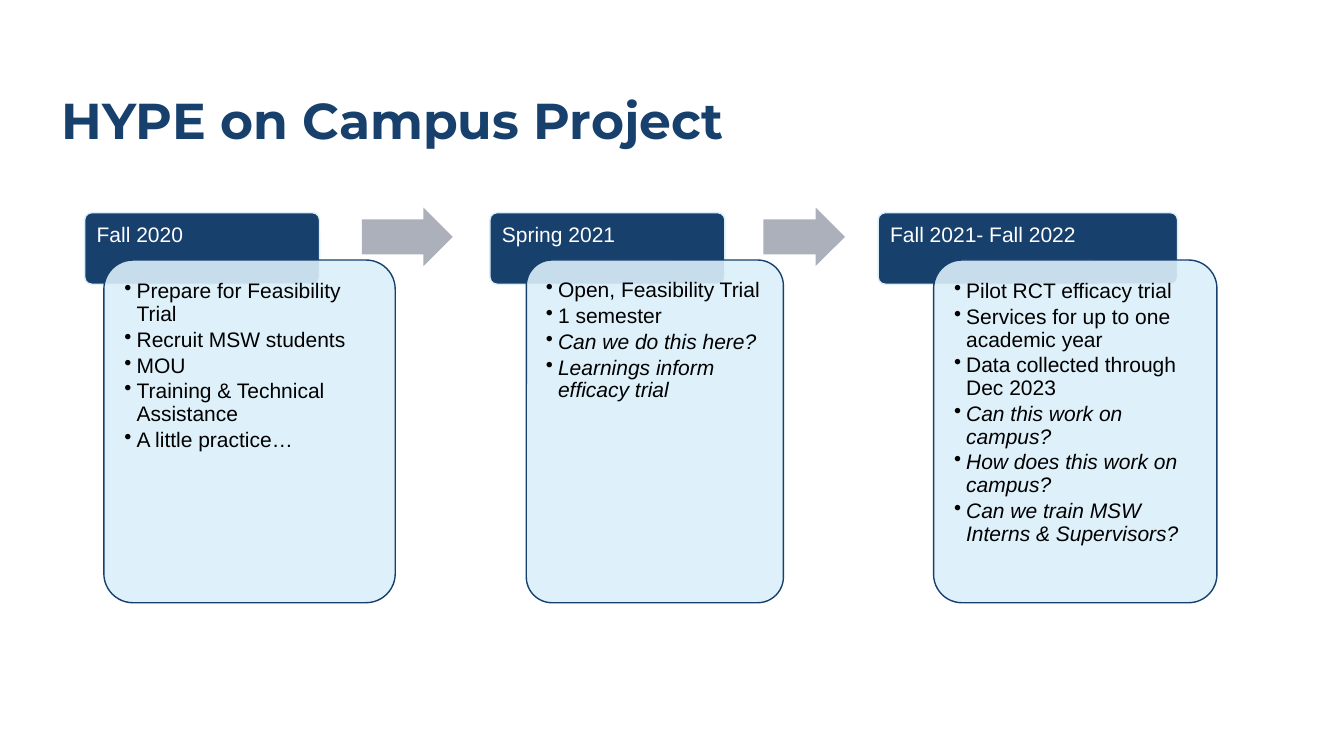
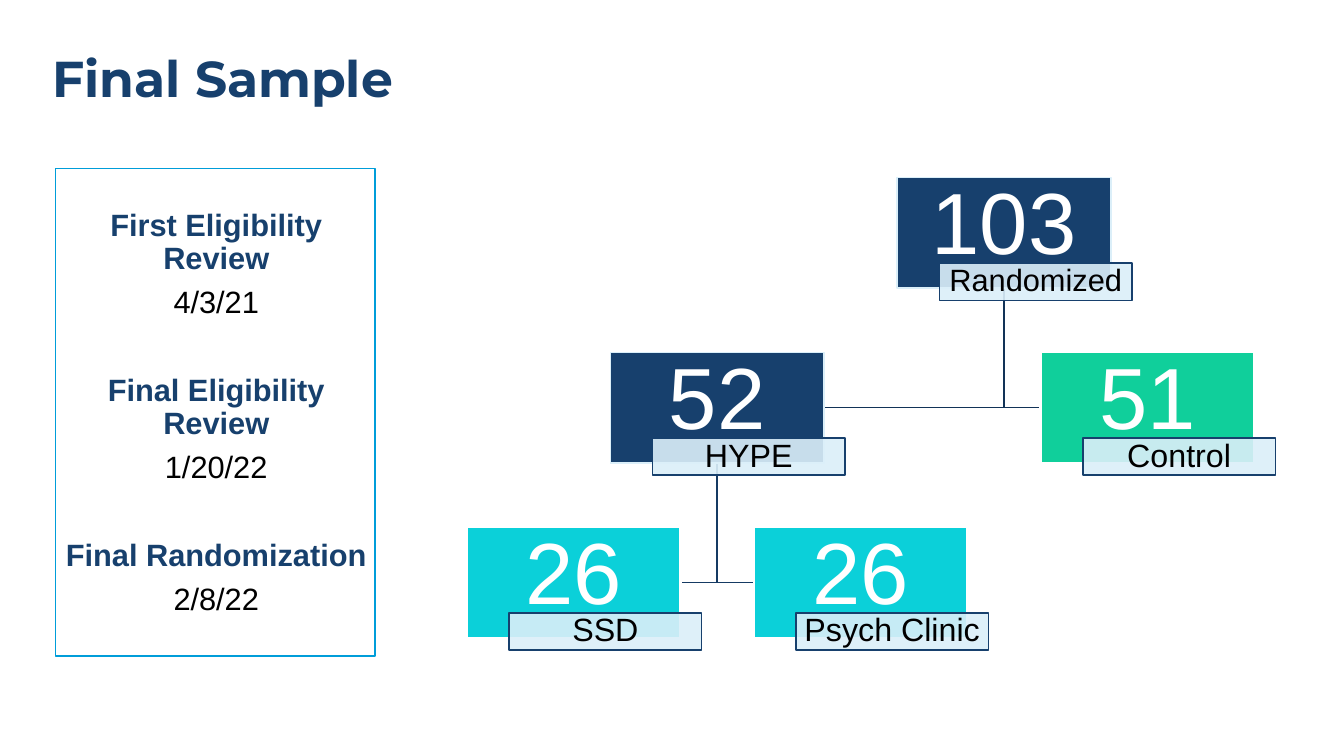
from lxml import etree
from pptx import Presentation
from pptx import util as u
from pptx.dml.color import RGBColor
from pptx.enum import shapes, text
from pptx.oxml.ns import qn

COLORS = {
    "navy": "17406D", "pale": "DBEFF9", "blue": "009DD9", "cyan": "0BD0D9",
    "green": "10CF9B", "gray": "ACB0BA", "white": "FFFFFF", "black": "000000",
    "root_line": "123357", "branch_line": "153A63",
}
LEFT, CENTER = text.PP_ALIGN.LEFT, text.PP_ALIGN.CENTER
TOP, MIDDLE = text.MSO_ANCHOR.TOP, text.MSO_ANCHOR.MIDDLE
RECT, ROUND = shapes.MSO_SHAPE.RECTANGLE, shapes.MSO_SHAPE.ROUNDED_RECTANGLE

STAGES = [
    ("Fall 2020", 0.84, 2.33, 1.03, 2.89, [
        ("Prepare for Feasibility Trial", False),
        ("Recruit MSW students", False),
        ("MOU", False),
        ("Training & Technical Assistance", False),
        ("A little practice…", False)]),
    ("Spring 2021", 4.86, 2.33, 5.22, 2.55, [
        ("Open, Feasibility Trial", False),
        ("1 semester", False),
        ("Can we do this here?", True),
        ("Learnings inform efficacy trial", True)]),
    ("Fall 2021- Fall 2022", 8.71, 2.97, 9.26, 2.81, [
        ("Pilot RCT efficacy trial", False),
        ("Services for up to one academic year", False),
        ("Data collected through Dec 2023", False),
        ("Can this work on campus?", True),
        ("How does this work on campus?", True),
        ("Can we train MSW Interns & Supervisors?", True)]),
]
ARROWS = [(3.59, 0.9), (7.57, 0.81)]

NODES = [
    ("103", "Randomized", 22, 3, 0, "navy"),
    ("52", "HYPE", 23, 1, 1, "navy"),
    ("26", "SSD", 23, 0, 2, "cyan"),
    ("26", "Psych Clinic", 23, 2, 2, "cyan"),
    ("51", "Control", 23, 4, 1, "green"),
]
BRANCHES = [(3, 0, 1, 4, "root_line"), (1, 1, 0, 2, "branch_line")]
NODE_W, NODE_H = 2.12, 1.1

DATES = [
    ("First Eligibility Review", "4/3/21"),
    ("Final Eligibility Review", "1/20/22"),
    ("Final Randomization", "2/8/22"),
]


def rgb(name):
    return RGBColor.from_string(COLORS[name])


def add_box(s, kind, box, fill, line=None, width=1, alpha=None):
    sp = s.shapes.add_shape(kind, *map(u.Inches, box))
    sp.shadow.inherit = False
    sp.fill.solid()
    sp.fill.fore_color.rgb = rgb(fill)
    if alpha:
        clr = sp._element.spPr.find(qn("a:solidFill"))[0]
        etree.SubElement(clr, qn("a:alpha"), val=str(alpha * 1000))
    if line:
        sp.line.color.rgb = rgb(line)
        sp.line.width = u.Pt(width)
    else:
        sp.line.fill.background()
    if kind == ROUND:
        sp.adjustments[0] = 0.1
    return sp


def set_frame(sp, insets, anchor):
    tf = sp.text_frame
    tf.word_wrap = True
    tf.vertical_anchor = anchor
    tf.margin_left, tf.margin_top, tf.margin_right, tf.margin_bottom = map(u.Inches, insets)
    return tf


def add_text(tf, words, size, color, align=LEFT, after=0.35, before=0,
             bold=False, italic=False, font="Arial", bullet=False):
    p = tf.paragraphs[0]
    if p.runs:
        p = tf.add_paragraph()
    p.alignment = align
    p.line_spacing = 0.9
    p.space_before = u.Pt(before)
    p.space_after = u.Pt(size * after)
    if bullet:
        pPr = p._p.get_or_add_pPr()
        pPr.set("marL", str(u.Inches(0.12)))
        pPr.set("indent", str(u.Inches(-0.12)))
        etree.SubElement(pPr, qn("a:buChar"), char="•")
    r = p.add_run()
    r.text = words
    r.font.name = font
    r.font.size = u.Pt(size)
    r.font.bold = bold
    r.font.italic = italic
    r.font.color.rgb = rgb(color)


def add_line(s, x1, y1, x2, y2, color):
    c = s.shapes.add_connector(shapes.MSO_CONNECTOR.STRAIGHT, *map(u.Inches, (x1, y1, x2, y2)))
    c.line.color.rgb = rgb(color)
    c.line.width = u.Pt(1)
    etree.SubElement(c._element.spPr, qn("a:effectLst"))


def add_slide(prs, title, left, top):
    s = prs.slides.add_slide(prs.slide_layouts[6])
    sp = s.shapes.add_textbox(*map(u.Inches, (left, top, 12.17, 0.9)))
    tf = set_frame(sp, (0.1, 0.05, 0.1, 0.05), MIDDLE)
    add_text(tf, title, 36, "navy", after=0, bold=True, font="Montserrat")
    return s


def add_stage(s, head, head_x, head_w, card_x, card_w, items):
    sp = add_box(s, ROUND, (head_x, 2.11, head_w, 0.71), "navy", "pale")
    add_text(set_frame(sp, (0.1, 0.1, 0.1, 0.06), TOP), head, 15, "white")
    sp = add_box(s, ROUND, (card_x, 2.58, card_w, 3.4), "pale", "navy", alpha=90)
    tf = set_frame(sp, (0.12,) * 4, TOP)
    for words, italic in items:
        add_text(tf, words, 15, "black", after=0.15, italic=italic, bullet=True)


def node_corner(col, row):
    return 4.63 + 5.69 * col / 4, 1.76 + 3.47 * row / 2


def add_branch(s, col, row, first, last, color):
    x, y = node_corner(col, row)
    start, bar_y = node_corner(first, row + 1)
    end, _ = node_corner(last, row + 1)
    mid, bar_y = x + NODE_W / 2, bar_y + NODE_H / 2
    add_line(s, mid, y + NODE_H, mid, bar_y, color)
    add_line(s, start + NODE_W, bar_y, end, bar_y, color)


def add_node(s, count, label, size, col, row, fill):
    x, y = node_corner(col, row)
    edge, width = ("pale", 1) if fill == "navy" else ("white", 1.5)
    sp = add_box(s, RECT, (x, y, NODE_W, NODE_H), fill, edge, width)
    add_text(set_frame(sp, (0.04, 0.04, 0.04, 0.16), MIDDLE), count, 62, "white", CENTER)
    sp = add_box(s, RECT, (x + 0.42, y + 0.85, 1.91, 0.37), "pale", "navy", alpha=90)
    add_text(set_frame(sp, (0.06, 0.02, 0.06, 0.02), MIDDLE), label, size, "black", CENTER)


def add_dates(s):
    sp = add_box(s, RECT, (0.55, 1.67, 3.17, 4.84), "white", "blue", alpha=90)
    tf = set_frame(sp, (0.07, 0.04, 0.05, 0.01), MIDDLE)
    for i, (name, date) in enumerate(DATES):
        add_text(tf, name, 22, "navy", CENTER, before=31.3 if i else 0, bold=True)
        add_text(tf, date, 22, "black", CENTER)


def main():
    prs = Presentation()
    prs.slide_width, prs.slide_height = u.Inches(13.33), u.Inches(7.5)

    s = add_slide(prs, "HYPE on Campus Project", 0.51, 0.77)
    for stage in STAGES:
        add_stage(s, *stage)
    for x, width in ARROWS:
        sp = add_box(s, shapes.MSO_SHAPE.RIGHT_ARROW, (x, 2.06, width, 0.58), "gray")
        sp.adjustments[0] = 0.6

    s = add_slide(prs, "Final Sample", 0.42, 0.36)
    for branch in BRANCHES:
        add_branch(s, *branch)
    for node in NODES:
        add_node(s, *node)
    add_dates(s)

    prs.save("out.pptx")


if __name__ == "__main__":
    main()
